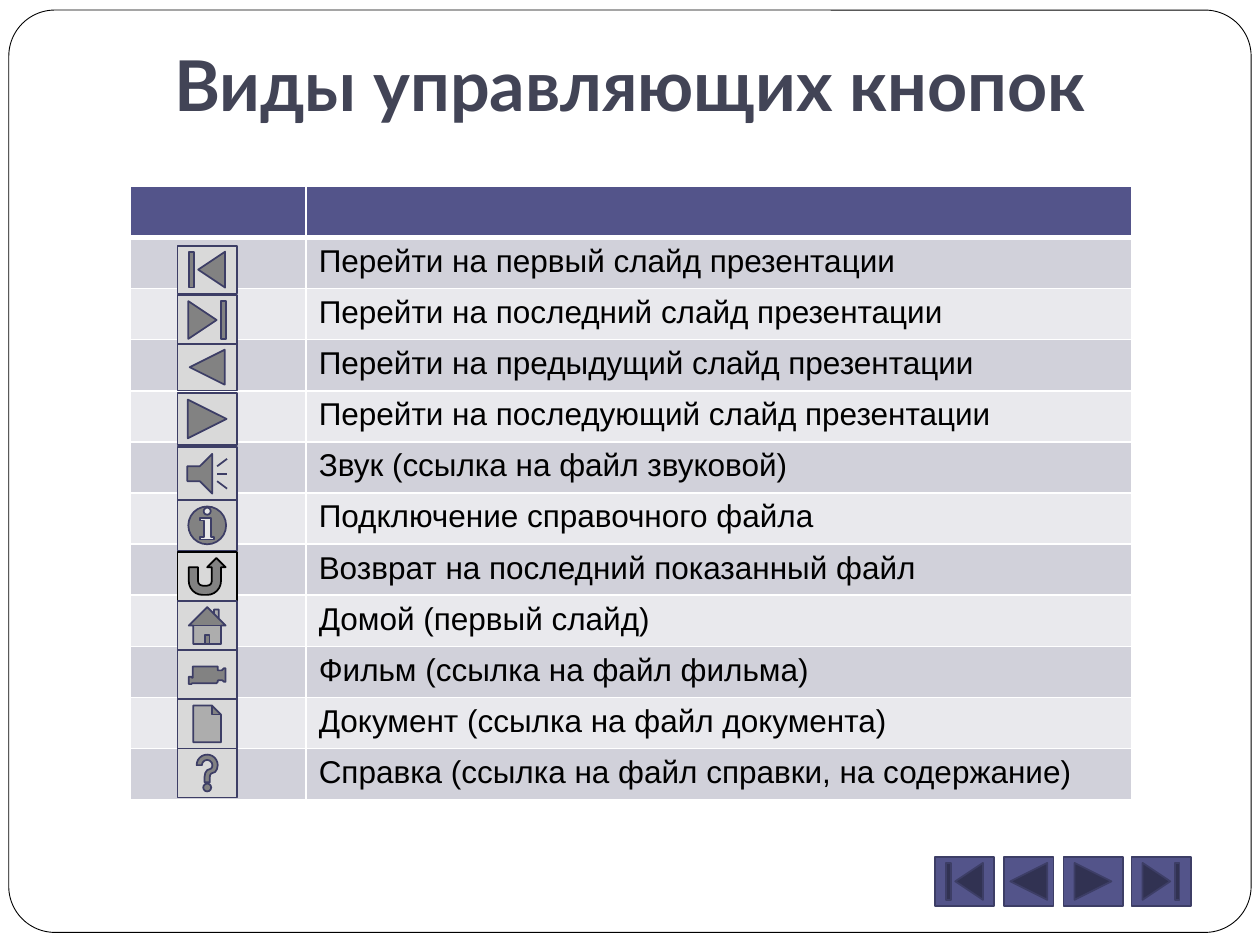
from lxml import etree
from pptx import Presentation
from pptx import util as u
from pptx.dml.color import RGBColor
from pptx.enum import shapes, text
from pptx.oxml import ns

MSO = shapes.MSO_SHAPE
INK, EDGE, VIOLET, GREY = "424456", "3D3E66", "53548A", "D9D9D9"
WHITE, BLACK = "FFFFFF", "000000"
BANDS = ("D1D1DA", "E9E9ED")


def paint(target, color):
    """Give a fill a solid colour."""
    target.solid()
    target.fore_color.rgb = RGBColor.from_string(color)


def write(frame, words, size=18, font="Arial", color=BLACK, bold=False,
          align=None, space=None):
    """Put one formatted paragraph into a text frame."""
    par = frame.paragraphs[0]
    par.alignment = align
    par.line_spacing = space
    run = par.add_run()
    run.text = words
    run.font.size = u.Pt(size)
    run.font.name = font
    run.font.bold = bold
    paint(run.font.fill, color)


class Page:
    """Holds the slide and its common style."""

    def __init__(self, slide, edge=EDGE):
        self.slide, self.edge = slide, edge

    def box(self, kind, at, fill, line=None, width=1, flip=False):
        shape = self.slide.shapes.add_shape(kind, *map(u.Inches, at))
        shape.shadow.inherit = False
        paint(shape.fill, fill)
        paint(shape.line.fill, line or self.edge)
        shape.line.width = u.Pt(width)
        if flip:
            shape.element.spPr.find(ns.qn("a:xfrm")).set("flipV", "1")
        return shape

    def title(self, words, at):
        frame = self.slide.shapes.add_textbox(*map(u.Inches, at)).text_frame
        frame.word_wrap = True
        frame.vertical_anchor = text.MSO_ANCHOR.BOTTOM
        frame.margin_bottom = u.Inches(0.1)
        write(frame, words, size=40, font="Lato", color=INK, bold=True,
              align=text.PP_ALIGN.CENTER, space=u.Pt(32))

    def cell(self, cell, fill, base):
        props = cell._tc.get_or_add_tcPr()
        for side, width in zip("LRTB", (1, 1, 1, base)):
            line = etree.SubElement(props, ns.qn("a:ln" + side),
                                    w=str(u.Pt(width)))
            solid = etree.SubElement(line, ns.qn("a:solidFill"))
            etree.SubElement(solid, ns.qn("a:srgbClr"), val=WHITE)
        paint(cell.fill, fill)

    def table(self, rows, at, cols, high):
        size = (sum(cols), high * (len(rows) + 1))
        grid = self.slide.shapes.add_table(
            len(rows) + 1, len(cols), *map(u.Inches, at + size)).table
        for col, wide in zip(grid.columns, cols):
            col.width = u.Inches(wide)
        for i, row in enumerate(grid.rows):
            row.height = u.Inches(high)
            for cell in row.cells:
                self.cell(cell, BANDS[(i - 1) % 2] if i else VIOLET,
                          1 if i else 3)
            if i:
                write(row.cells[1].text_frame, rows[i - 1])


# Button kind, top, height, meaning
BUTTONS = [
    (MSO.ACTION_BUTTON_BEGINNING, 1.95, 0.38,
     "Перейти на первый слайд презентации"),
    (MSO.ACTION_BUTTON_END, 2.34, 0.4,
     "Перейти на последний слайд презентации"),
    (MSO.ACTION_BUTTON_BACK_OR_PREVIOUS, 2.73, 0.37,
     "Перейти на предыдущий слайд презентации"),
    (MSO.ACTION_BUTTON_FORWARD_OR_NEXT, 3.12, 0.41,
     "Перейти на последующий слайд презентации"),
    (MSO.ACTION_BUTTON_SOUND, 3.55, 0.42, "Звук (ссылка на файл звуковой)"),
    (MSO.ACTION_BUTTON_INFORMATION, 3.97, 0.4,
     "Подключение справочного файла"),
    (MSO.ACTION_BUTTON_RETURN, 4.38, 0.39,
     "Возврат на последний показанный файл"),
    (MSO.ACTION_BUTTON_HOME, 4.77, 0.39, "Домой (первый слайд)"),
    (MSO.ACTION_BUTTON_MOVIE, 5.16, 0.39, "Фильм (ссылка на файл фильма)"),
    (MSO.ACTION_BUTTON_DOCUMENT, 5.55, 0.39,
     "Документ (ссылка на файл документа)"),
    (MSO.ACTION_BUTTON_HELP, 5.94, 0.39,
     "Справка (ссылка на файл справки, на содержание)"),
]
# Button kind, left, width
MOVES = [
    (MSO.ACTION_BUTTON_END, 8.98, 0.47),
    (MSO.ACTION_BUTTON_FORWARD_OR_NEXT, 8.44, 0.47),
    (MSO.ACTION_BUTTON_BACK_OR_PREVIOUS, 7.97, 0.39),
    (MSO.ACTION_BUTTON_BEGINNING, 7.42, 0.47),
]


def main():
    deck = Presentation()
    deck.slide_width, deck.slide_height = u.Inches(10), u.Inches(7.5)
    page = Page(deck.slides.add_slide(deck.slide_layouts[6]))

    # Frame and title
    frame = page.box(MSO.ROUNDED_RECTANGLE, (0.07, 0.08, 9.86, 7.32),
                     WHITE, BLACK, 0.5)
    frame.adjustments[0] = 0.05
    page.title("Виды управляющих кнопок", (0.75, 0.16, 8.5, 0.94))

    # Navigation bar
    for kind, left, wide in MOVES:
        page.box(kind, (left, 6.8, wide, 0.39), VIOLET)

    # Table of meanings
    page.table([row[-1] for row in BUTTONS], (1.03, 1.48), (1.4, 6.55),
               4.87 / 12)

    # Button samples over the first column
    for kind, top, high, _ in BUTTONS:
        line = BLACK if kind == MSO.ACTION_BUTTON_RETURN else EDGE
        page.box(kind, (1.41, top, 0.47, high), GREY, line,
                 flip=kind == MSO.ACTION_BUTTON_MOVIE)

    deck.save("out.pptx")


if __name__ == "__main__":
    main()
